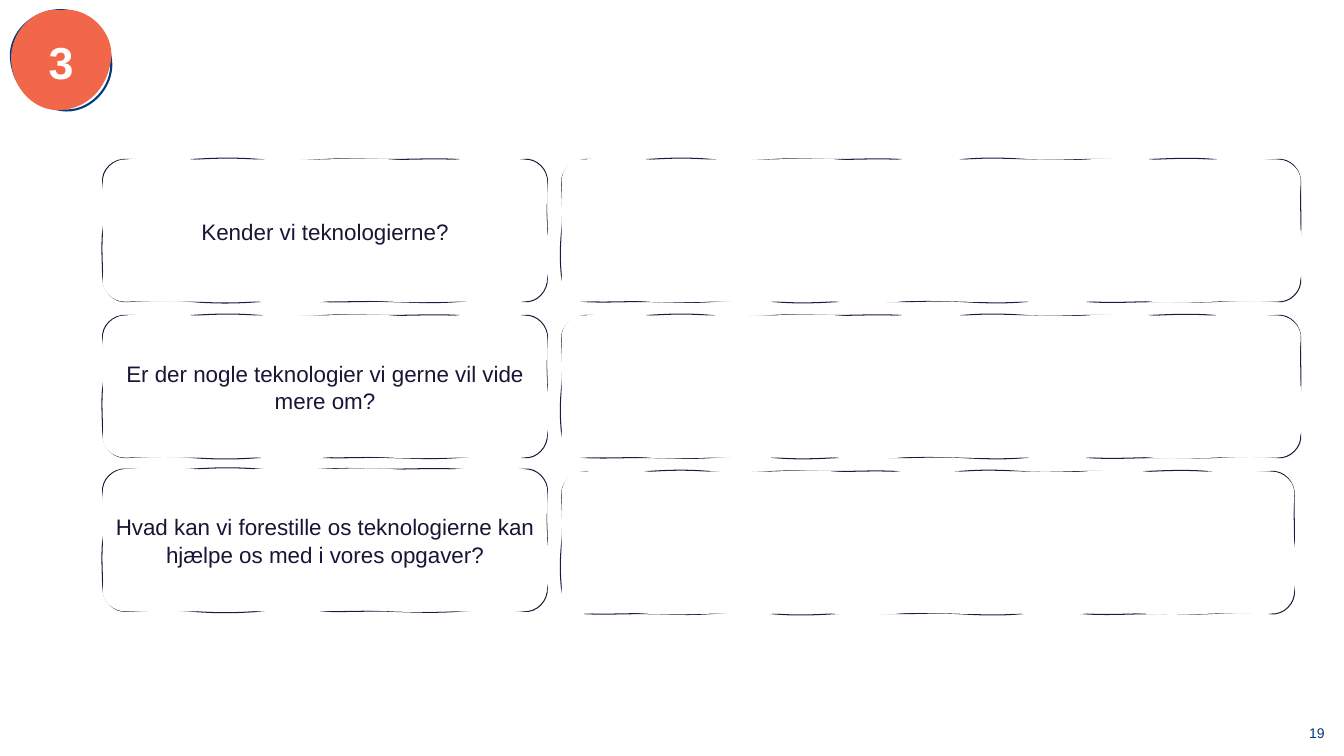
import copy
import math
import pptx
import pptx.dml.color
import pptx.enum.text
import pptx.oxml.ns
import pptx.util
from lxml import etree
from dataclasses import dataclass

Pt = pptx.util.Pt
RGB = pptx.dml.color.RGBColor.from_string
ALIGN = pptx.enum.text.PP_ALIGN
ANCHOR = pptx.enum.text.MSO_ANCHOR
qn = pptx.oxml.ns.qn


@dataclass(frozen=True)
class Theme:
    font: str = "Arial"
    coral: str = "F26749"
    navy: str = "003B7A"
    ink: str = "1E1B3A"
    text: str = "181535"
    white: str = "FFFFFF"
    badge_size: float = 32
    question_size: float = 16
    number_size: float = 10


theme = Theme()
UNITS_PER_POINT = 100
SIDES_CLOCKWISE = [(1, 0), (0, 1), (-1, 0), (0, -1)]
ARC_REACH = 0.55
STROKE_LENGTH = 45
STROKE_TURN = 2.4
OUTLINE_PHASE, FILL_PHASE = 3.0, -1.2


def write(text, *, frame, size, color, bold=False, align=ALIGN.CENTER,
          anchor=ANCHOR.MIDDLE, spacing=1.04):
    frame.word_wrap = True
    frame.vertical_anchor = anchor
    paragraph = frame.paragraphs[0]
    paragraph.alignment = align
    paragraph.line_spacing = spacing
    run = paragraph.add_run()
    run.text = text
    run.font.name = theme.font
    run.font.size = Pt(size)
    run.font.bold = bold
    run.font.color.rgb = RGB(color)


def sketch(left, top, width, height, *, radius, sway, fill, line, weight):
    contours = []
    for phase in (OUTLINE_PHASE, FILL_PHASE):
        x, y = radius, 0
        points = [(x, y)]
        stroke_count = 0
        for dx, dy in SIDES_CLOCKWISE:
            side = (width if dx else height) - 2 * radius
            pieces = round(side / STROKE_LENGTH)
            strokes = [(side / pieces, 0, (dx, dy))] * pieces if pieces else []
            strokes.append((radius, radius, (-dy, dx)))
            for ahead, inward, (out_x, out_y) in strokes:
                end_x = x + ahead * dx - inward * dy
                end_y = y + ahead * dy + inward * dx
                reach = ahead * (ARC_REACH if inward else 1 / 3)
                bend = sway * math.sin(phase + STROKE_TURN * stroke_count)
                stroke_count += 1
                next_bend = sway * math.sin(phase + STROKE_TURN * stroke_count)
                points += [
                    (x + reach * dx - bend * dy, y + reach * dy + bend * dx),
                    (end_x - reach * out_x + next_bend * out_y,
                     end_y - reach * out_y - next_bend * out_x),
                    (end_x, end_y),
                ]
                x, y = end_x, end_y
        contours.append([(round(px * UNITS_PER_POINT), round(py * UNITS_PER_POINT))
                         for px, py in points])

    joints = contours[0][::3]
    builder = slide.shapes.build_freeform(*joints[0], scale=Pt(1) / UNITS_PER_POINT)
    builder.add_line_segments(joints[1:], close=True)
    shape = builder.convert_to_shape(Pt(left), Pt(top))

    outline = next(shape._element.iter(qn("a:path")))
    for segment in list(outline):
        outline.remove(segment)
    area = copy.deepcopy(outline)
    outline.addnext(area)
    outline.set("fill", "none")
    area.set("stroke", "0")
    for contour, points in zip((outline, area), contours):
        commands = [("a:moveTo", points[:1])]
        commands += [("a:cubicBezTo", points[i:i + 3]) for i in range(1, len(points), 3)]
        for command, targets in commands:
            segment = etree.SubElement(contour, qn(command))
            for px, py in targets:
                etree.SubElement(segment, qn("a:pt"), x=str(px), y=str(py))
        etree.SubElement(contour, qn("a:close"))

    shape.shadow.inherit = False
    shape.fill.solid()
    shape.fill.fore_color.rgb = RGB(fill)
    shape.line.color.rgb = RGB(line)
    shape.line.width = Pt(weight)
    return shape


deck = pptx.Presentation()
deck.slide_width, deck.slide_height = Pt(960), Pt(540)
slide = deck.slides.add_slide(deck.slide_layouts[6])

BADGE_DIAMETER = 71.4
badge = sketch(7.9, 7.2, BADGE_DIAMETER, BADGE_DIAMETER, radius=BADGE_DIAMETER / 2,
               sway=3, fill=theme.coral, line=theme.navy, weight=1.5)
write("3", frame=badge.text_frame, size=theme.badge_size, color=theme.white, bold=True)

CARD_HEIGHT = 101.6
QUESTION_LEFT, QUESTION_WIDTH = 73.4, 317.6
ANSWER_LEFT = 401.2
card_style = dict(radius=17, sway=1.4, fill=theme.white, line=theme.ink, weight=0.75)

rows = [
    ("Kender vi teknologierne?", 113.9, 113.9, 527.9),
    ("Er der nogle teknologier vi gerne vil vide mere om?", 225.3, 225.3, 527.9),
    ("Hvad kan vi forestille os teknologierne kan hjælpe os med i vores opgaver?",
     335.1, 336.8, 523.3),
]
for question, question_top, answer_top, answer_width in rows:
    card = sketch(QUESTION_LEFT, question_top, QUESTION_WIDTH, CARD_HEIGHT, **card_style)
    write(question, frame=card.text_frame, size=theme.question_size, color=theme.text)
    sketch(ANSWER_LEFT, answer_top, answer_width, CARD_HEIGHT, **card_style)

page_number = slide.shapes.add_textbox(Pt(902.2), Pt(494.6), Pt(43.9), Pt(34.6)).text_frame
page_number.margin_left = page_number.margin_right = 0
page_number.margin_top = page_number.margin_bottom = 0
write("19", frame=page_number, size=theme.number_size, color=theme.navy,
      align=ALIGN.RIGHT, anchor=ANCHOR.BOTTOM, spacing=1.0)

deck.save("out.pptx")
